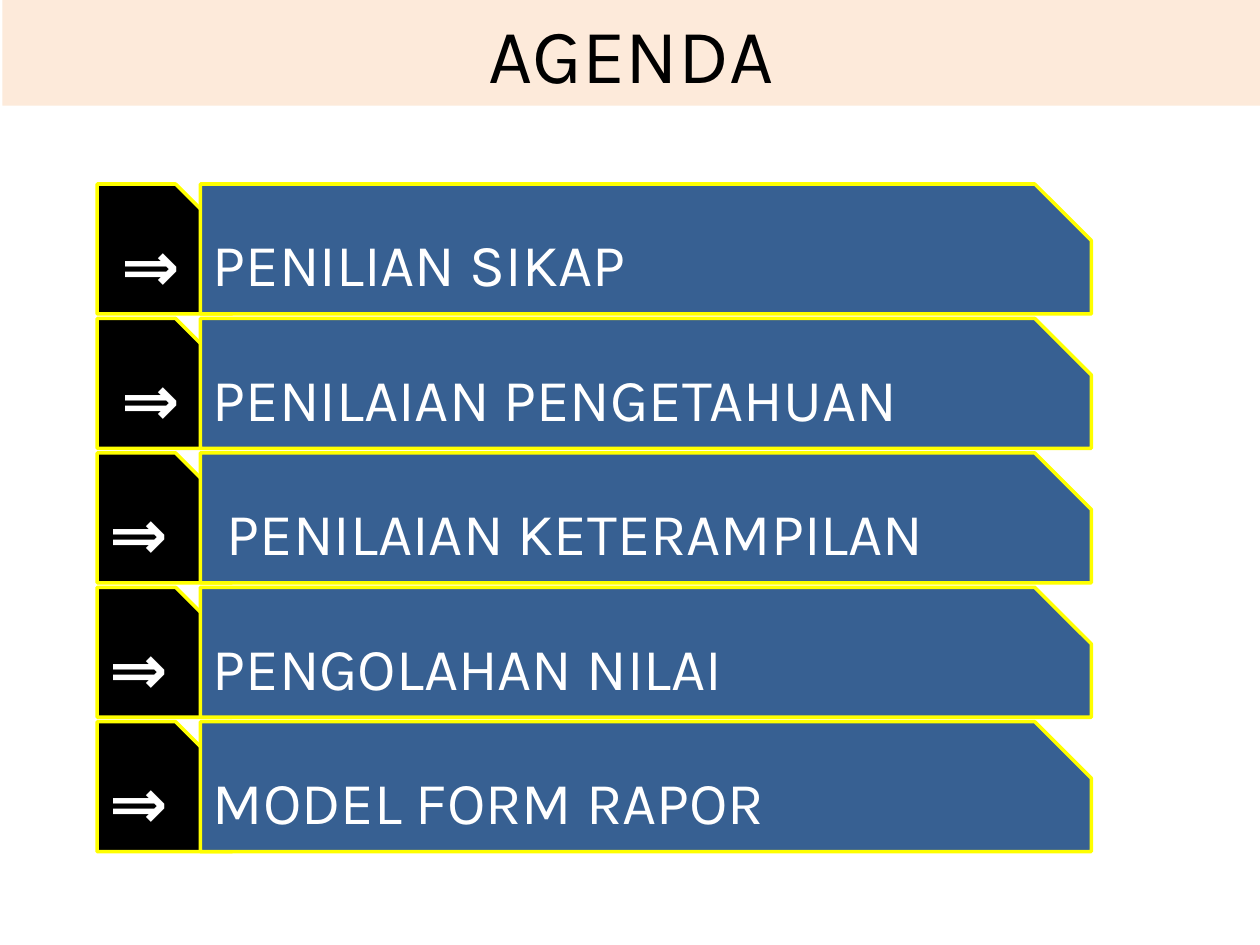
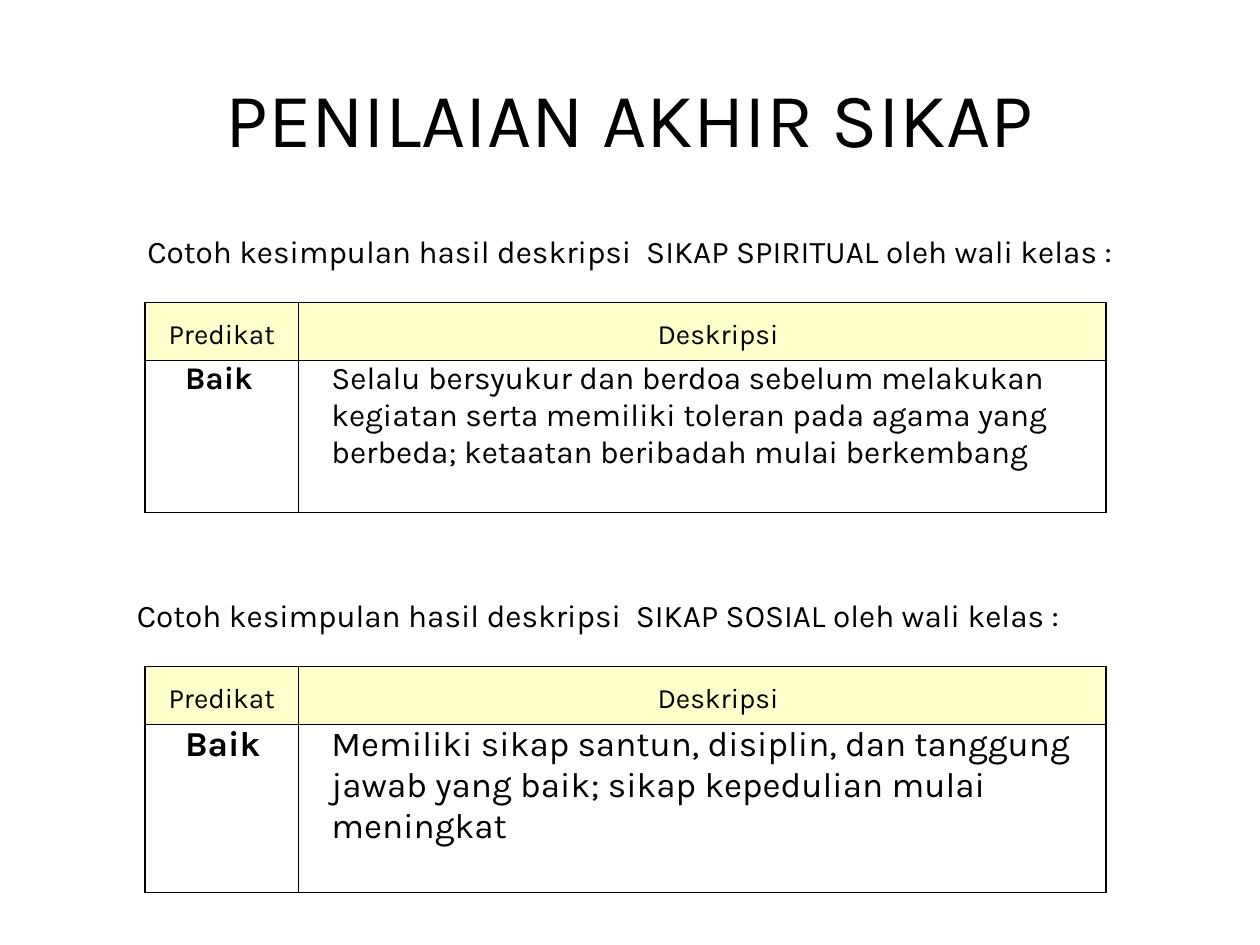
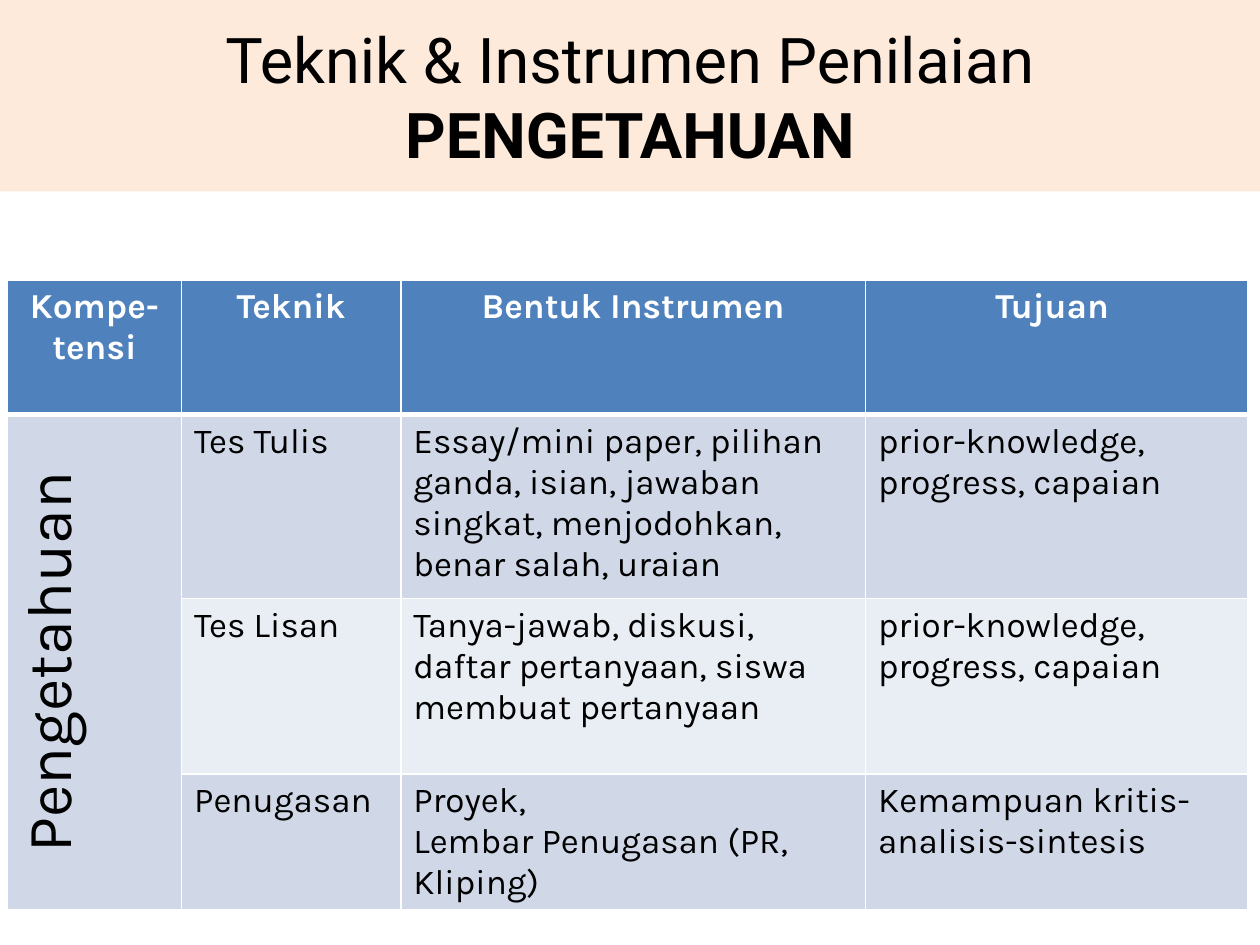
from dataclasses import dataclass

from lxml.etree import SubElement as Sub
from pptx import Presentation
from pptx.dml.color import RGBColor as Rgb
from pptx.enum.shapes import MSO_SHAPE as Form
from pptx.enum.text import MSO_ANCHOR as Anchor, MSO_AUTO_SIZE as Fit, PP_ALIGN as Align
from pptx.oxml.ns import qn
from pptx.util import Cm, Pt


@dataclass(frozen=True)
class Theme:
    font: str = "Karla"
    alt: str = "Roboto"
    ink: str = "000000"
    paper: str = "FFFFFF"
    band: str = "FDEADA"
    bar: str = "376092"
    edge: str = "FFFF00"
    cream: str = "FFFFCC"
    head: str = "4F81BD"
    dark: str = "D0D8E8"
    light: str = "E9EDF4"
    title: int = 44
    mark: int = 40
    big: int = 36
    item: int = 34
    body: int = 20
    note: int = 18
    small: int = 16


@dataclass(frozen=True)
class Box:
    left: float
    top: float
    width: float
    height: float

    def emu(self) -> tuple:
        return Cm(self.left), Cm(self.top), Cm(self.width), Cm(self.height)


@dataclass(frozen=True)
class Step:
    text: str
    align: Align = Align.LEFT


@dataclass(frozen=True)
class Style:
    size: int
    color: str = "000000"
    bold: bool = False
    align: Align = Align.LEFT
    margin: float = 0
    indent: float = 0
    lines: float | None = None
    before: int | None = None


@dataclass(frozen=True)
class Case:
    """A caption and its table of grade and description."""
    box: Box
    note: str
    top: float
    deep: float
    size: int
    text: str


T = Theme()
STEPS = [
    Step("PENILIAN SIKAP", Align.CENTER),
    Step("PENILAIAN PENGETAHUAN", Align.CENTER),
    Step(" PENILAIAN KETERAMPILAN"),
    Step("PENGOLAHAN NILAI"),
    Step("MODEL FORM RAPOR"),
]
CASES = [
    Case(Box(2.72, 4.55, 21.18, 1.02),
         "Cotoh kesimpulan hasil deskripsi  SIKAP SPIRITUAL oleh wali kelas :",
         6.1, 3.06, T.note,
         "Selalu bersyukur dan berdoa sebelum melakukan kegiatan serta memiliki "
         "toleran pada agama yang berbeda; ketaatan beribadah mulai berkembang"),
    Case(Box(2.51, 11.89, 21.18, 1.02),
         "Cotoh kesimpulan hasil deskripsi  SIKAP SOSIAL oleh wali kelas :",
         13.44, 3.38, T.body,
         "Memiliki sikap santun, disiplin, dan tanggung jawab yang baik; "
         "sikap kepedulian mulai meningkat"),
]
TESTS = [
    ["Kompe-tensi", "Teknik", "Bentuk Instrumen", "Tujuan "],
    ["Pengetahuan", "Tes Tulis",
     "Essay/mini paper, pilihan ganda, isian, jawaban singkat, menjodohkan, "
     "benar salah, uraian", "prior-knowledge, progress, capaian"],
    ["", "Tes Lisan",
     "Tanya-jawab, diskusi, daftar pertanyaan, siswa membuat pertanyaan",
     "prior-knowledge, progress, capaian"],
    ["", "Penugasan", "Proyek, \vLembar Penugasan (PR, Kliping)",
     "Kemampuan kritis-analisis-sintesis"],
]


# Text and fills
def paint(fill, color: str) -> None:
    fill.solid()
    fill.fore_color.rgb = Rgb.from_string(color)


def write(frame, text: str, style: Style, font: str = T.font) -> None:
    frame.text = text
    para = frame.paragraphs[0]
    para.alignment = style.align
    para.font.name, para.font.size, para.font.bold = font, Pt(style.size), style.bold
    para.font.color.rgb = Rgb.from_string(style.color)
    if style.lines:
        para.line_spacing = style.lines
    if style.before:
        para.space_before = Pt(style.before)
    if style.margin:
        props = para._p.get_or_add_pPr()
        props.set("marL", str(Cm(style.margin)))
        props.set("indent", str(Cm(style.indent)))


def start(deck, text: str, box: Box, size: int, fill: str | None = None,
          font: str = T.font):
    """Add a title-only slide and format its title."""
    slide = deck.slides.add_slide(deck.slide_layouts[5])
    title = slide.shapes.title
    title.left, title.top, title.width, title.height = box.emu()
    if fill:
        paint(title.fill, fill)
    frame = title.text_frame
    write(frame, text, Style(size, T.ink, align=Align.CENTER), font)
    frame.vertical_anchor, frame.auto_size = Anchor.MIDDLE, Fit.NONE
    return slide


# Bars
def snip(slide, box: Box, fill: str, text: str, style: Style) -> None:
    shape = slide.shapes.add_shape(Form.SNIP_1_RECTANGLE, *box.emu())
    shape.adjustments[0] = 0.435
    shape.shadow.inherit = False
    paint(shape.fill, fill)
    shape.line.color.rgb = Rgb.from_string(T.edge)
    shape.line.width = Pt(2)
    write(shape.text_frame, text, style)
    shape.text_frame.vertical_anchor = Anchor.MIDDLE


# Tables
def rule(cell, color: str, top: float = 1, base: float = 1) -> None:
    props = cell._tc.get_or_add_tcPr()
    for side, width in zip("LRTB", (1, 1, top, base)):
        line = Sub(props, qn(f"a:ln{side}"), w=str(Pt(width)))
        Sub(Sub(line, qn("a:solidFill")), qn("a:srgbClr"), val=color)


def grid(slide, left: float, top: float, cols: list[float], rows: list[float]):
    box = Box(left, top, sum(cols), sum(rows))
    table = slide.shapes.add_table(len(rows), len(cols), *box.emu()).table
    table.first_row = table.horz_banding = False
    for col, width in zip(table.columns, cols):
        col.width = Cm(width)
    for row, height in zip(table.rows, rows):
        row.height = Cm(height)
    return table


# Slides
def agenda(deck) -> None:
    slide = start(deck, "AGENDA", Box(0.05, 0, 25.35, 2.13), T.title, T.band)
    for i, step in enumerate(STEPS):
        top = 3.71 + i * 2.71
        snip(slide, Box(1.96, top, 2.72, 2.62), T.ink, "⇒",
             Style(T.mark, T.paper, True, step.align))
        snip(slide, Box(4.04, top, 17.96, 2.62), T.bar, step.text,
             Style(T.item, T.paper))


def grade(slide, case: Case) -> None:
    note = slide.shapes.add_textbox(*case.box.emu()).text_frame
    note.word_wrap = True
    write(note, case.note, Style(T.note))

    table = grid(slide, 2.92, case.top, [3.1, 16.28], [1.17, case.deep])
    head = dict(size=T.small, align=Align.CENTER, lines=1.5, before=6)
    texts = ["Predikat", "Deskripsi", "Baik", case.text]
    styles = [
        Style(**head),
        Style(**head, margin=1.27, indent=-0.64),
        Style(case.size, bold=True, margin=1.27, indent=-0.64),
        Style(case.size, margin=0.48),
    ]
    for i, (cell, text, style) in enumerate(zip(table.iter_cells(), texts, styles)):
        cell.margin_left = cell.margin_right = Cm(0.18)
        cell.margin_top = cell.margin_bottom = 0
        rule(cell, T.ink)
        if i < 2:
            paint(cell.fill, T.cream)
        else:
            cell.fill.background()
        write(cell.text_frame, text, style)


def attitude(deck) -> None:
    slide = start(deck, "PENILAIAN AKHIR SIKAP", Box(1.27, 0.76, 22.86, 3.18), T.title)
    for case in CASES:
        grade(slide, case)


def methods(deck) -> None:
    slide = start(deck, "Teknik & Instrumen Penilaian ", Box(0, 0, 25.4, 3.86),
                  T.big, T.band, T.alt)
    run = slide.shapes.title.text_frame.paragraphs[0].add_run()
    run.text, run.font.bold = "PENGETAHUAN", True

    table = grid(slide, 0.15, 5.64, [3.51, 4.42, 9.37, 7.7], [2.72, 3.71, 3.53, 2.72])
    head = Style(T.body, T.paper, True, Align.CENTER)
    for r, texts in enumerate(TESTS):
        for c, text in enumerate(texts):
            cell = table.cell(r, c)
            rule(cell, T.paper, 3 if r == 1 else 1, 3 if r == 0 else 1)
            fill = T.head if r == 0 else T.light if r == 2 and c else T.dark
            paint(cell.fill, fill)
            if text:
                write(cell.text_frame, text, Style(T.body) if r else head)

    # Upright label over the three test rows
    side = table.cell(1, 0)
    side.merge(table.cell(3, 0))
    write(side.text_frame, TESTS[1][0], Style(T.big, align=Align.CENTER))
    side.vertical_anchor = Anchor.MIDDLE
    side._tc.get_or_add_tcPr().set("vert", "vert270")


def main() -> None:
    deck = Presentation()
    deck.slide_width, deck.slide_height = Cm(25.4), Cm(19.05)
    for build in (agenda, attitude, methods):
        build(deck)
    deck.save("out.pptx")


if __name__ == "__main__":
    main()
